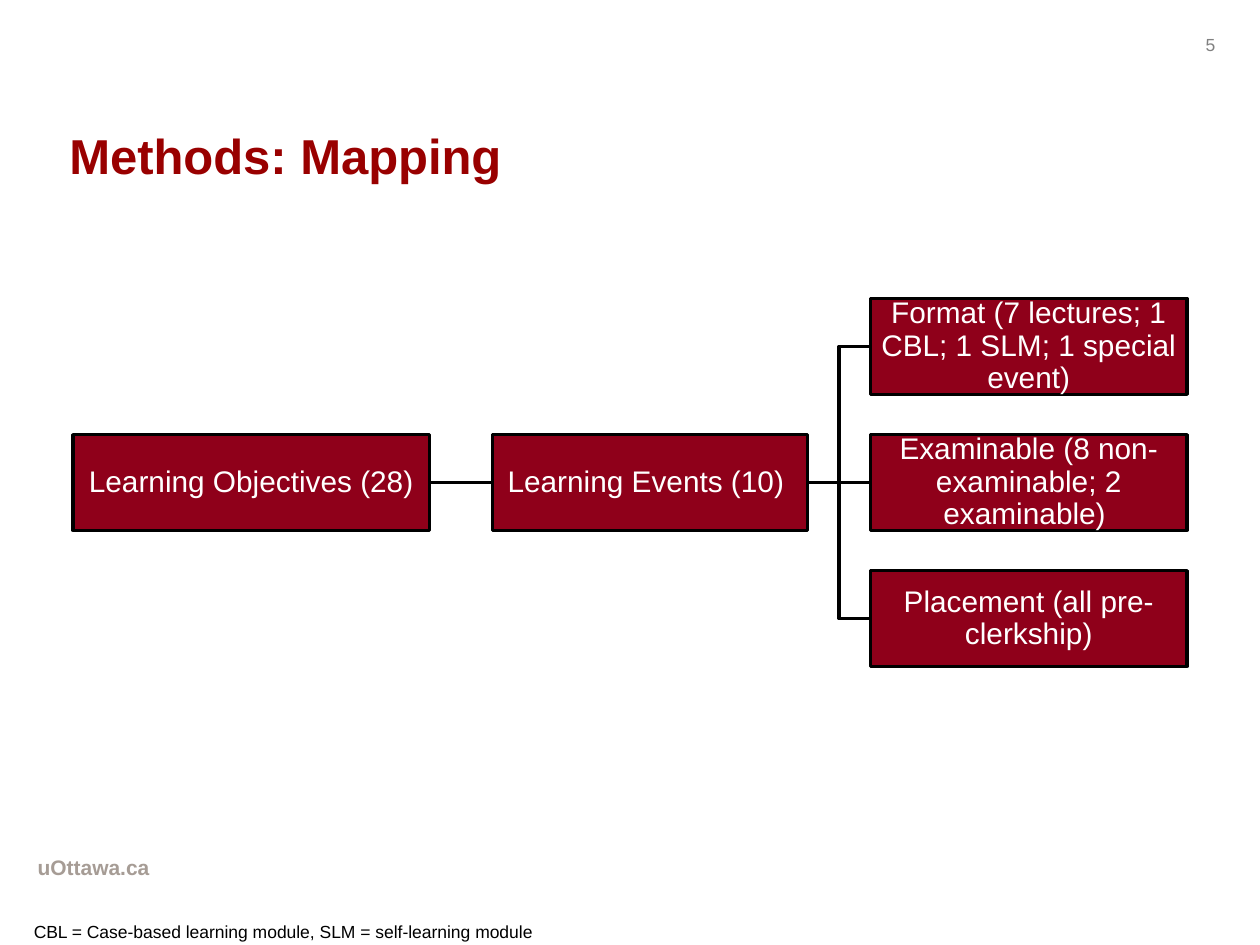
from lxml import etree
from pptx import Presentation
from pptx.dml.color import RGBColor
from pptx.enum.shapes import MSO_CONNECTOR, MSO_SHAPE
from pptx.enum.text import MSO_ANCHOR, MSO_AUTO_SIZE, PP_ALIGN
from pptx.oxml.ns import qn
from pptx.util import Inches, Pt

RECTANGLE = MSO_SHAPE.RECTANGLE
STRAIGHT = MSO_CONNECTOR.STRAIGHT
LEFT, CENTER = PP_ALIGN.LEFT, PP_ALIGN.CENTER
MIDDLE, TOP = MSO_ANCHOR.MIDDLE, MSO_ANCHOR.TOP
NO_AUTOFIT = MSO_AUTO_SIZE.NONE
LINE_WIDTH = Pt(2)


def color(hex_code):
    return RGBColor.from_string(hex_code)


def write(holder, text, size, ink, bold=False, align=LEFT, anchor=TOP,
          spacing=1.0, inset=(0.1, 0.05), wrap=True):
    frame = holder.text_frame
    frame.auto_size = NO_AUTOFIT
    frame.word_wrap = wrap
    frame.vertical_anchor = anchor
    frame.margin_left = frame.margin_right = Inches(inset[0])
    frame.margin_top = frame.margin_bottom = Inches(inset[1])
    paragraph = frame.paragraphs[0]
    paragraph.text = text
    paragraph.alignment = align
    paragraph.line_spacing = spacing
    paragraph.space_before = Pt(0)
    font = paragraph.runs[0].font
    font.name = "Arial"
    font.size = Pt(size)
    font.bold = bold
    font.color.rgb = color(ink)


prs = Presentation()
prs.slide_width, prs.slide_height = Inches(10), Inches(7.5)
slide = prs.slides.add_slide(prs.slide_layouts[5])
shapes = slide.shapes

title = shapes.title
title.left, title.top = Inches(0.45), Inches(0.76)
title.width, title.height = Inches(8.5), Inches(0.94)
write(title, "Methods: Mapping", 28, "990000", bold=True, anchor=MIDDLE)

labels = [
    ("5", 9.47, 0.22, 0.47, 0.27, 10, "808080", False, True),
    ("uOttawa.ca", 0.2, 6.73, 4.96, 0.39, 12, "A69C95", True, True),
    ("CBL = Case-based learning module, SLM = self-learning module",
     0.17, 7.26, 4.2, 0.27, 10, "000000", False, False),
]
for text, left, top, width, height, size, ink, bold, wrap in labels:
    label = shapes.add_textbox(Inches(left), Inches(top), Inches(width), Inches(height))
    write(label, text, size, ink, bold=bold, wrap=wrap)

gap = 0.5
box_height = 0.76
row_pitch = 1.08
middle_y = 3.83
column_widths = [2.83, 2.5, 2.51]
column_lefts = [0.58]
for width in column_widths[:-1]:
    column_lefts.append(column_lefts[-1] + width + gap)
branch_start = column_lefts[2] - gap
branch_end = column_lefts[2]
branch_middle = branch_start + gap / 2

for direction in (1, -1):
    branch_y = middle_y + direction * row_pitch
    builder = shapes.build_freeform(Inches(branch_start), Inches(middle_y))
    corners = [(branch_middle, middle_y), (branch_middle, branch_y), (branch_end, branch_y)]
    builder.add_line_segments([(Inches(x), Inches(y)) for x, y in corners], close=False)
    branch = builder.convert_to_shape()
    branch.fill.background()
    branch.line.color.rgb = color("000000")
    branch.line.width = LINE_WIDTH
    branch.shadow.inherit = False

for column_left in column_lefts[1:]:
    link = shapes.add_connector(STRAIGHT, Inches(column_left - gap), Inches(middle_y),
                                Inches(column_left), Inches(middle_y))
    link.line.color.rgb = color("000000")
    link.line.width = LINE_WIDTH
    etree.SubElement(link._element.spPr, qn("a:effectLst"))

steps = [
    (0, 0, "Learning Objectives (28)"),
    (1, 0, "Learning Events (10) "),
    (2, -1, "Format (7 lectures; 1 CBL; 1 SLM; 1 special event)"),
    (2, 0, "Examinable (8 non-examinable; 2 examinable) "),
    (2, 1, "Placement (all pre-clerkship)"),
]
for column, row, text in steps:
    step_top = middle_y + row * row_pitch - box_height / 2
    step = shapes.add_shape(RECTANGLE, Inches(column_lefts[column]), Inches(step_top),
                            Inches(column_widths[column]), Inches(box_height))
    step.shadow.inherit = False
    step.fill.solid()
    step.fill.fore_color.rgb = color("8F001A")
    step.line.color.rgb = color("000000")
    step.line.width = LINE_WIDTH
    write(step, text, 17, "FFFFFF", align=CENTER, anchor=MIDDLE,
          spacing=0.9, inset=(0.01, 0.01))

prs.save("out.pptx")
